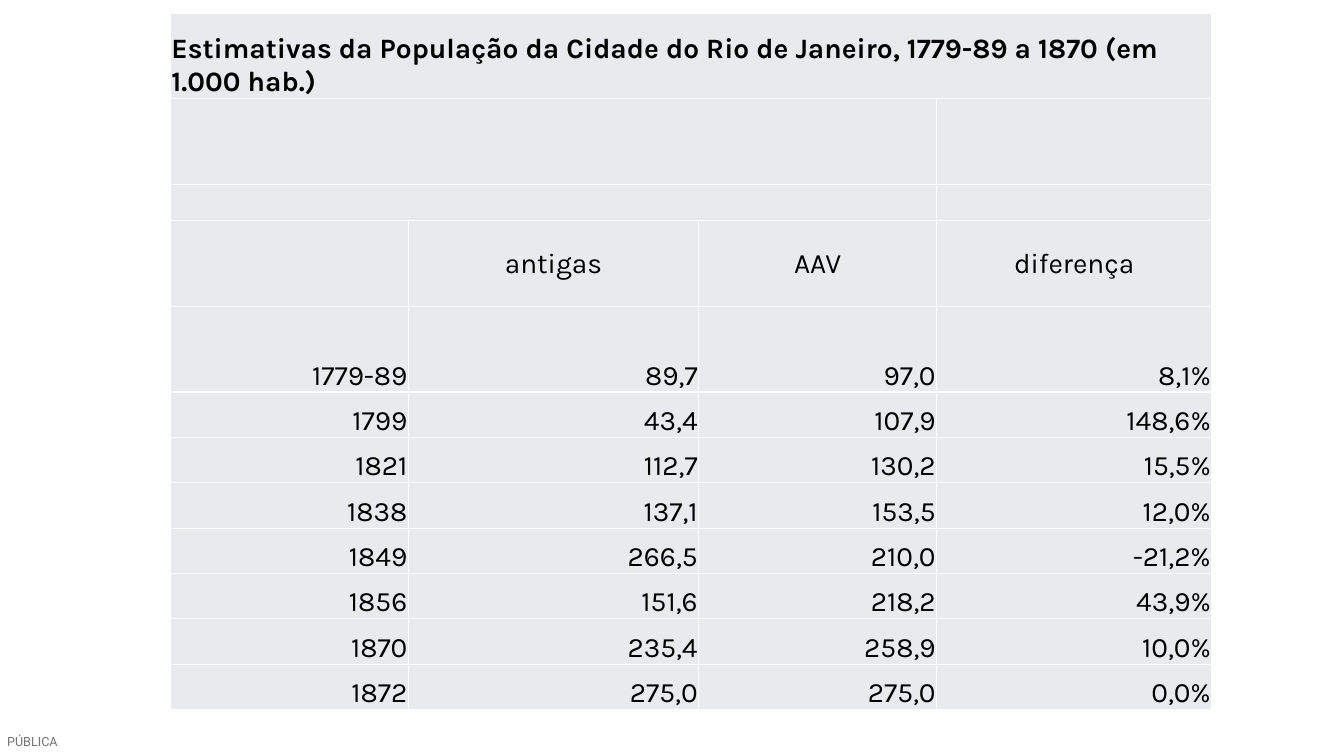
from lxml.etree import SubElement
from pptx import Presentation
from pptx.dml.color import RGBColor
from pptx.enum.text import MSO_ANCHOR, PP_ALIGN
from pptx.oxml.ns import qn
from pptx.util import Inches, Pt

BLACK = RGBColor(0x00, 0x00, 0x00)
WHITE = RGBColor(0xFF, 0xFF, 0xFF)
PALE_GRAY = RGBColor(0xE8, 0xEA, 0xED)
LABEL_GRAY = RGBColor(0x73, 0x73, 0x73)

TITLE = "Estimativas da População da Cidade do Rio de Janeiro, 1779-89 a 1870 (em 1.000 hab.)"
HEADER_ROW = 3
COLUMN_WIDTHS = [2.36, 2.88, 2.36, 2.73]
ROW_HEIGHTS = [0.85, 0.85, 0.36, 0.85, 0.85] + [0.45] * 7
ESTIMATES = [
    [TITLE, "", "", ""],
    ["", "", "", ""],
    ["", "", "", ""],
    ["", "antigas", "AAV", "diferença"],
    ["1779-89", "89,7", "97,0", "8,1%"],
    ["1799", "43,4", "107,9", "148,6%"],
    ["1821", "112,7", "130,2", "15,5%"],
    ["1838", "137,1", "153,5", "12,0%"],
    ["1849", "266,5", "210,0", "-21,2%"],
    ["1856", "151,6", "218,2", "43,9%"],
    ["1870", "235,4", "258,9", "10,0%"],
    ["1872", "275,0", "275,0", "0,0%"],
]


def add_borders(cell):
    properties = cell._tc.get_or_add_tcPr()
    for side in ("a:lnL", "a:lnR", "a:lnT", "a:lnB"):
        border = SubElement(properties, qn(side), w=str(Pt(1)))
        fill = SubElement(border, qn("a:solidFill"))
        SubElement(fill, qn("a:srgbClr"), val=str(WHITE))


presentation = Presentation()
presentation.slide_width = Inches(13.33)
presentation.slide_height = Inches(7.5)
slide = presentation.slides.add_slide(presentation.slide_layouts[6])

classification = slide.shapes.add_textbox(Inches(0.07), Inches(7.28), Inches(0.51), Inches(0.15))
label = classification.text_frame
label.margin_left = label.margin_right = label.margin_top = label.margin_bottom = 0
label.text = "PÚBLICA"
label_font = label.paragraphs[0].font
label_font.name = "Roboto"
label_font.size = Pt(9)
label_font.color.rgb = LABEL_GRAY

population = slide.shapes.add_table(
    len(ROW_HEIGHTS), len(COLUMN_WIDTHS),
    Inches(1.69), Inches(0.13), Inches(10.34), Inches(6.88),
).table
population.first_row = False
population.horz_banding = False
for column, width in zip(population.columns, COLUMN_WIDTHS):
    column.width = Inches(width)
for row, height in zip(population.rows, ROW_HEIGHTS):
    row.height = Inches(height)

for row_index, values in enumerate(ESTIMATES):
    for column_index, value in enumerate(values):
        cell = population.cell(row_index, column_index)
        cell.text = value
        cell.margin_left = cell.margin_right = cell.margin_top = Inches(0.01)
        cell.margin_bottom = 0
        cell.vertical_anchor = MSO_ANCHOR.MIDDLE if row_index == HEADER_ROW else MSO_ANCHOR.BOTTOM
        add_borders(cell)
        cell.fill.solid()
        cell.fill.fore_color.rgb = PALE_GRAY
        paragraph = cell.text_frame.paragraphs[0]
        if row_index == HEADER_ROW:
            paragraph.alignment = PP_ALIGN.CENTER
        elif row_index > HEADER_ROW:
            paragraph.alignment = PP_ALIGN.RIGHT
        paragraph.font.name = "Karla"
        paragraph.font.size = Pt(20)
        paragraph.font.bold = row_index == 0
        paragraph.font.color.rgb = BLACK

for row_index, last_column in ((0, 3), (1, 2), (2, 2)):
    population.cell(row_index, 0).merge(population.cell(row_index, last_column))

presentation.save("out.pptx")
